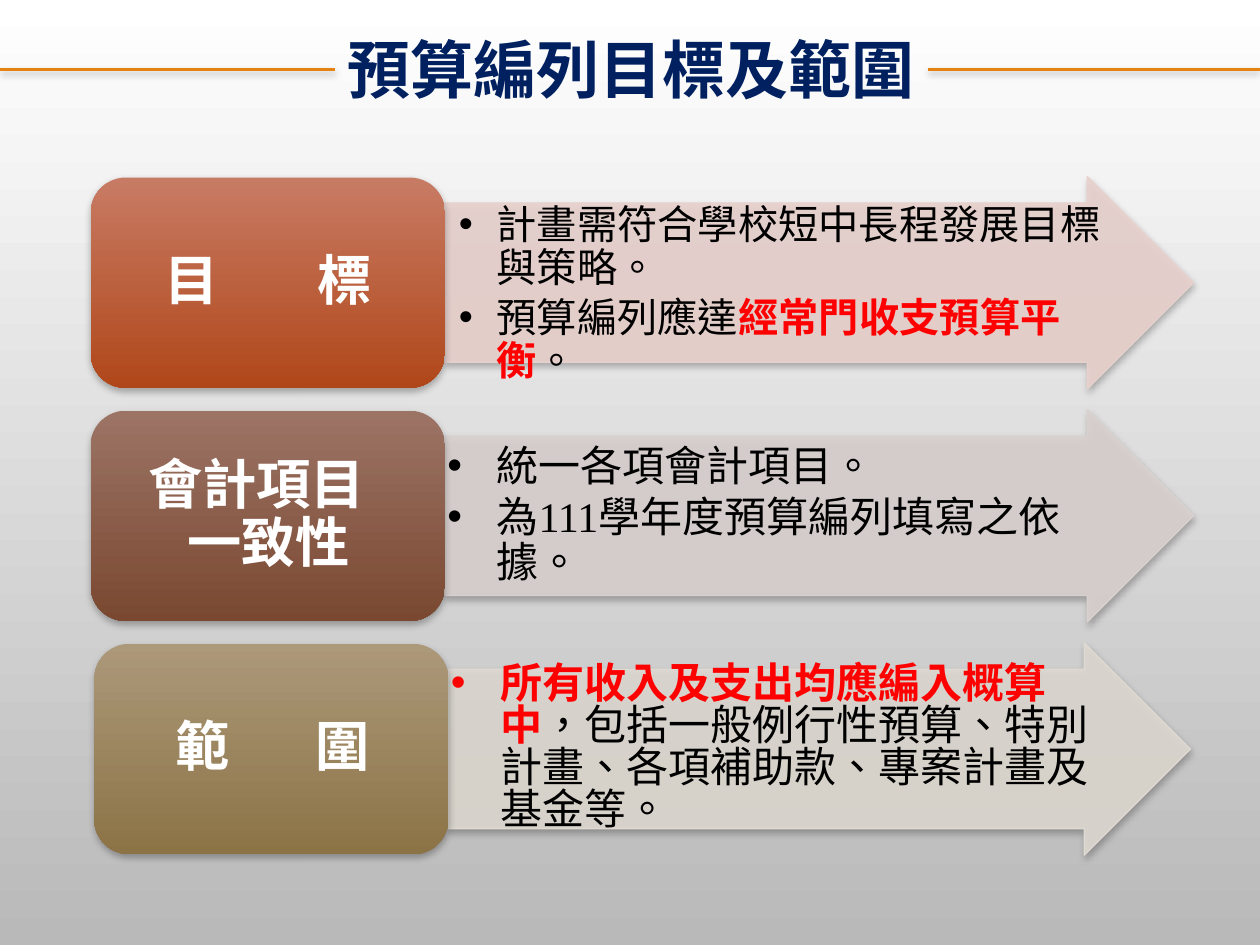
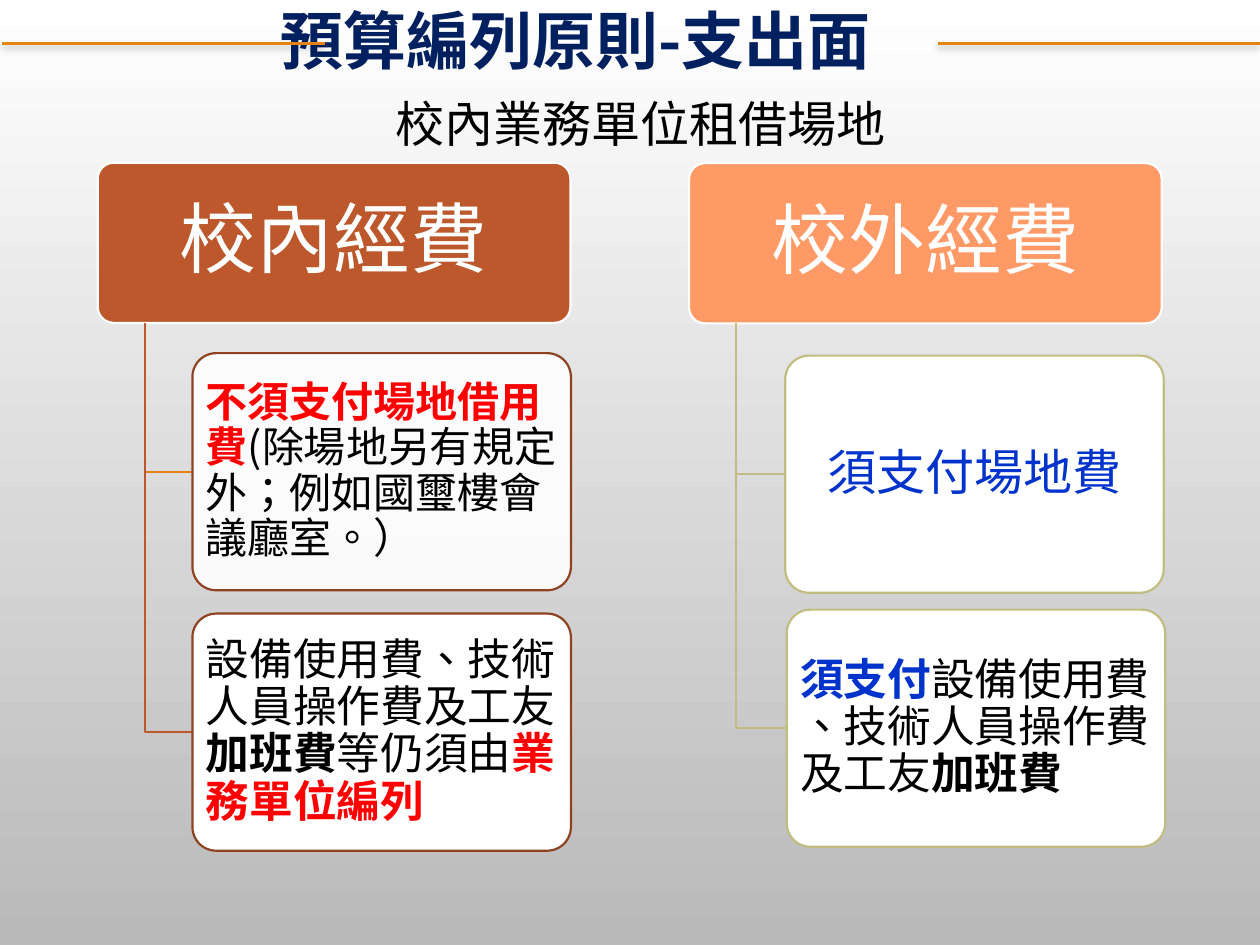
import pptx
import pptx.dml.color
import pptx.enum.dml
import pptx.enum.shapes
import pptx.enum.text
import pptx.oxml
import pptx.oxml.ns
import pptx.util

Cm, Pt = pptx.util.Cm, pptx.util.Pt
SHAPE = pptx.enum.shapes.MSO_SHAPE
ALIGN = pptx.enum.text.PP_ALIGN
ANCHOR = pptx.enum.text.MSO_ANCHOR
qn = pptx.oxml.ns.qn

CJK = "Noto Sans CJK SC"
WHITE, BLACK, RED, BLUE = "FFFFFF", "000000", "FF0000", "0033CC"
NAVY, ORANGE, RUST, DARK_RUST = "002060", "E48312", "BD582C", "8E4221"
SALMON, OLIVE = "FF9966", "C2BC80"
COMPARISON, TITLE_ONLY = 4, 5


def rgb(hex_color):
    return pptx.dml.color.RGBColor.from_string(hex_color)


def add_xml(parent, tag, **attributes):
    """Append a drawing element and return it."""
    child = parent.makeelement(qn(tag), {})
    for name, value in attributes.items():
        child.set(name, str(value))
    parent.append(child)
    return child


def fill_gradient(fill, top, bottom):
    fill.gradient()
    fill.gradient_angle = 270
    for stop, color in zip(fill.gradient_stops, (top, bottom)):
        stop.color.rgb = rgb(color)


def add_shadow(effects):
    outer = add_xml(effects, "a:outerShdw", blurRad=Pt(4), dist=Pt(2),
                    dir=5400000, rotWithShape=0)
    add_xml(add_xml(outer, "a:srgbClr", val=BLACK), "a:alpha", val=28000)


def write(frame, paragraphs, size=24, color=BLACK, bold=False, font=CJK,
          align=ALIGN.LEFT, anchor=ANCHOR.MIDDLE, insets=(0.25, 0.13, 0.25),
          spacing=1.0, after=0, hang=None, tab=None, wrap=True):
    """Fill a text frame; each paragraph lists strings or (string, format) runs.

    insets are left, top and bottom, right; hang is (left margin, bullet
    indent) and tab a stop, all in centimetres.
    """
    frame.word_wrap = wrap
    frame.auto_size = pptx.enum.text.MSO_AUTO_SIZE.NONE
    frame.vertical_anchor = anchor
    left, vertical, right = insets
    frame.margin_left, frame.margin_right = Cm(left), Cm(right)
    frame.margin_top = frame.margin_bottom = Cm(vertical)
    for index, runs in enumerate(paragraphs):
        paragraph = frame.add_paragraph() if index else frame.paragraphs[0]
        properties = paragraph._p.get_or_add_pPr()
        properties.set("hangingPunct", "0")
        if hang:
            properties.set("marL", str(Cm(hang[0])))
            properties.set("indent", str(Cm(hang[1])))
            add_xml(properties, "a:buFont", typeface="Arial")
            add_xml(properties, "a:buChar", char="•")
        if tab:
            stops = add_xml(properties, "a:tabLst")
            add_xml(stops, "a:tab", pos=Cm(tab), algn="l")
        paragraph.alignment = align
        paragraph.line_spacing = spacing
        paragraph.space_before = Pt(0)
        paragraph.space_after = Pt(after)
        for part in runs:
            text, own = (part, {}) if isinstance(part, str) else part
            run = paragraph.add_run()
            run.text = text
            run.font.size = Pt(size)
            run.font.bold = own.get("bold", bold)
            run.font.color.rgb = rgb(own.get("color", color))
            run.font.name = own.get("font", font)
            run_properties = run._r.get_or_add_rPr()
            run_properties.set("lang", "zh-TW")
            add_xml(run_properties, "a:ea", typeface=CJK)


class Deck:
    def __init__(self):
        self.presentation = pptx.Presentation()
        self.presentation.slide_width = Cm(25.4)
        self.presentation.slide_height = Cm(19.05)
        master = self.presentation.slide_master
        fill_gradient(master.background.fill, WHITE, "B9B9B9")
        self.slide = None

    def start_slide(self, layout, title, place, rule_y, rules):
        """Add a slide with its title and the two rules beside it."""
        layouts = self.presentation.slide_layouts
        self.slide = self.presentation.slides.add_slide(layouts[layout])
        heading = self.slide.shapes.title
        self.place(heading, *place)
        write(heading.text_frame, [[title]], size=36, color=NAVY, bold=True)
        for start, end in rules:
            self.rule(start, end, rule_y)

    def place(self, item, left, top, width, height):
        item.left, item.top = Cm(left), Cm(top)
        item.width, item.height = Cm(width), Cm(height)

    def rule(self, start, end, y):
        rule = self.slide.shapes.add_connector(
            pptx.enum.shapes.MSO_CONNECTOR.STRAIGHT,
            Cm(start), Cm(y), Cm(end), Cm(y))
        rule.line.color.rgb = rgb(ORANGE)
        rule.line.width = Pt(1.75)
        add_shadow(add_xml(rule._element.spPr, "a:effectLst"))

    def box(self, kind, place, fill, outline=None, width=1.25, adjust=(),
            opacity=100, shadow=False):
        """Add a preset shape; a pair of colours as fill makes a gradient."""
        box = self.slide.shapes.add_shape(kind, *map(Cm, place))
        for index, value in enumerate(adjust):
            box.adjustments[index] = value
        if isinstance(fill, tuple):
            fill_gradient(box.fill, *fill)
        else:
            box.fill.solid()
            box.fill.fore_color.rgb = rgb(fill)
        if opacity < 100:
            color = box._element.spPr.find(qn("a:solidFill"))[0]
            add_xml(color, "a:alpha", val=opacity * 1000)
        if outline:
            box.line.color.rgb = rgb(outline)
            box.line.width = Pt(width)
        else:
            box.line.fill.background()
        box.shadow.inherit = False
        if shadow:
            add_shadow(box._element.spPr.find(qn("a:effectLst")))
        return box

    def bullets(self, index, place, paragraphs, **style):
        """Fill a body placeholder and bring it to the front."""
        body = self.slide.placeholders[index]
        self.place(body, *place)
        write(body.text_frame, paragraphs, after=3.5, **style)
        body.element.getparent().append(body.element)

    def drop_placeholder(self, index):
        element = self.slide.placeholders[index].element
        element.getparent().remove(element)

    def caption(self, place, text, **style):
        caption = self.slide.shapes.add_textbox(*map(Cm, place))
        write(caption.text_frame, [[text]], **style)

    def branch(self, x, top, end_x, end_y, color):
        """Draw the right-angled line from a heading to one of its items."""
        builder = self.slide.shapes.build_freeform(Cm(x), Cm(top))
        builder.add_line_segments(
            [(Cm(x), Cm(end_y)), (Cm(end_x), Cm(end_y))], close=False)
        branch = builder.convert_to_shape()
        branch.fill.background()
        branch.line.color.rgb = rgb(color)
        branch.line.width = Pt(1.25)
        branch.shadow.inherit = False


def build_goals(deck):
    deck.start_slide(COMPARISON, "預算編列目標及範圍", (6.75, 0.48, 12.42, 1.8),
                     1.4, [(0, 6.76), (18.71, 25.4)])
    deck.drop_placeholder(4)
    strong = dict(color=RED, bold=True)
    rows = [
        (1.83, 15.09, ("C87B64", "B0471A"), "E8D1CD", [["目\t標"]],
         dict(tab=3.08, insets=(1.28, 0.15, 0.33)),
         [["計畫需符合學校短中長程發展目標與策略。"],
          ["預算編列應達", ("經常門收支預算平衡", strong), "。"]],
         dict(size=23, hang=(0.99, -0.76), spacing=0.9, anchor=ANCHOR.TOP,
              insets=(0.05, 0.03, 0.05))),
        (1.83, 15.09, ("9C7465", "7A4831"), "D9D1CF", [["會計項目"], ["\t一致性"]],
         dict(tab=0.79, insets=(0.95, 0.15, 0.33)),
         [["統一各項會計項目。"],
          ["為", ("111", dict(font="Times New Roman")),
           "學年度預算編列填寫之依據。"]],
         dict(hang=(0.99, -0.99), spacing=0.9, insets=(0.05, 0.05, 0))),
        (1.9, 14.96, ("AC997A", "8C7346"), "DED9D1", [["範\t圍"]],
         dict(tab=2.82, insets=(1.43, 0.15, 0.33)),
         [[("所有收入及支出均應編入概算中", strong),
           "，包括一般例行性預算、特別計畫、各項補助款、專案計畫及基金等。"]],
         dict(hang=(0.99, -0.99), spacing=Pt(24), insets=(0.05, 0.05, 0))),
    ]
    for number, row in enumerate(rows):
        (left, arrow_width, label_fill, arrow_fill,
         label, label_style, points, style) = row
        top = 3.58 + 4.7 * number
        arrow_left = left + 7.14
        deck.box(SHAPE.RIGHT_ARROW, (arrow_left, top - 0.02, arrow_width, 4.28),
                 arrow_fill, arrow_fill, 0.75, (0.75, 0.5), opacity=90,
                 shadow=True)
        topic = deck.box(SHAPE.ROUNDED_RECTANGLE, (left, top, 7.14, 4.24),
                         label_fill, shadow=True)
        write(topic.text_frame, label, size=31, color=WHITE, bold=True,
              spacing=0.9, **label_style)
        deck.bullets(number + 1, (arrow_left, top + 0.51, arrow_width - 1.61, 3.22),
                     points, **style)


def build_venue_costs(deck):
    deck.start_slide(TITLE_ONLY, "預算編列原則-支出面", (5.4, -0.1, 13.75, 1.8),
                     0.88, [(0.05, 6.55), (18.9, 25.4)])
    deck.caption((6.46, 1.75, 12.9, 1.47), "校內業務單位租借場地", size=28,
                 font="Arial", align=ALIGN.CENTER, wrap=False)
    strong = dict(color=RED, bold=True)
    heavy = dict(bold=True)
    columns = [
        (1.97, 3.28, "校內經費", RUST, DARK_RUST, [
            (3.88, 7.12, ORANGE, 90, dict(size=24),
             [[("不須支付場地借用費", strong),
               "(除場地另有規定外；例如國璽樓會議廳室。）"]]),
            (3.88, 12.37, RUST, 100, dict(size=25),
             [["設備使用費、技術人員操作費及工友", ("加班費", heavy),
               "等仍須由", ("業務單位編列", strong)]]),
        ]),
        (13.89, 3.29, "校外經費", SALMON, OLIVE, [
            (15.83, 7.17, OLIVE, 100,
             dict(size=28, color=BLUE, align=ALIGN.CENTER),
             [["須支付場地費"]]),
            (15.86, 12.29, OLIVE, 100, dict(size=25),
             [[("須支付", dict(color=BLUE, bold=True)), "設備使用費"],
              ["、技術人員操作費及工友", ("加班費", heavy)]]),
        ]),
    ]
    for left, heading_top, funding, fill, outline, items in columns:
        heading = deck.box(SHAPE.ROUNDED_RECTANGLE,
                           (left, heading_top, 9.53, 3.23), fill, WHITE,
                           adjust=(0.1,))
        write(heading.text_frame, [[funding]], size=44, color=WHITE,
              align=ALIGN.CENTER, spacing=0.9)
        for item_left, top, branch_color, opacity, style, text in items:
            deck.branch(left + 0.95, heading_top + 3.23, item_left, top + 2.39,
                        branch_color)
            item = deck.box(SHAPE.ROUNDED_RECTANGLE, (item_left, top, 7.63, 4.78),
                            WHITE, outline, adjust=(0.1,), opacity=opacity)
            write(item.text_frame, text, spacing=0.9,
                  insets=(0.13, 0.08, 0.13), **style)


def main():
    deck = Deck()
    build_goals(deck)
    build_venue_costs(deck)
    deck.presentation.save("out.pptx")


if __name__ == "__main__":
    main()
